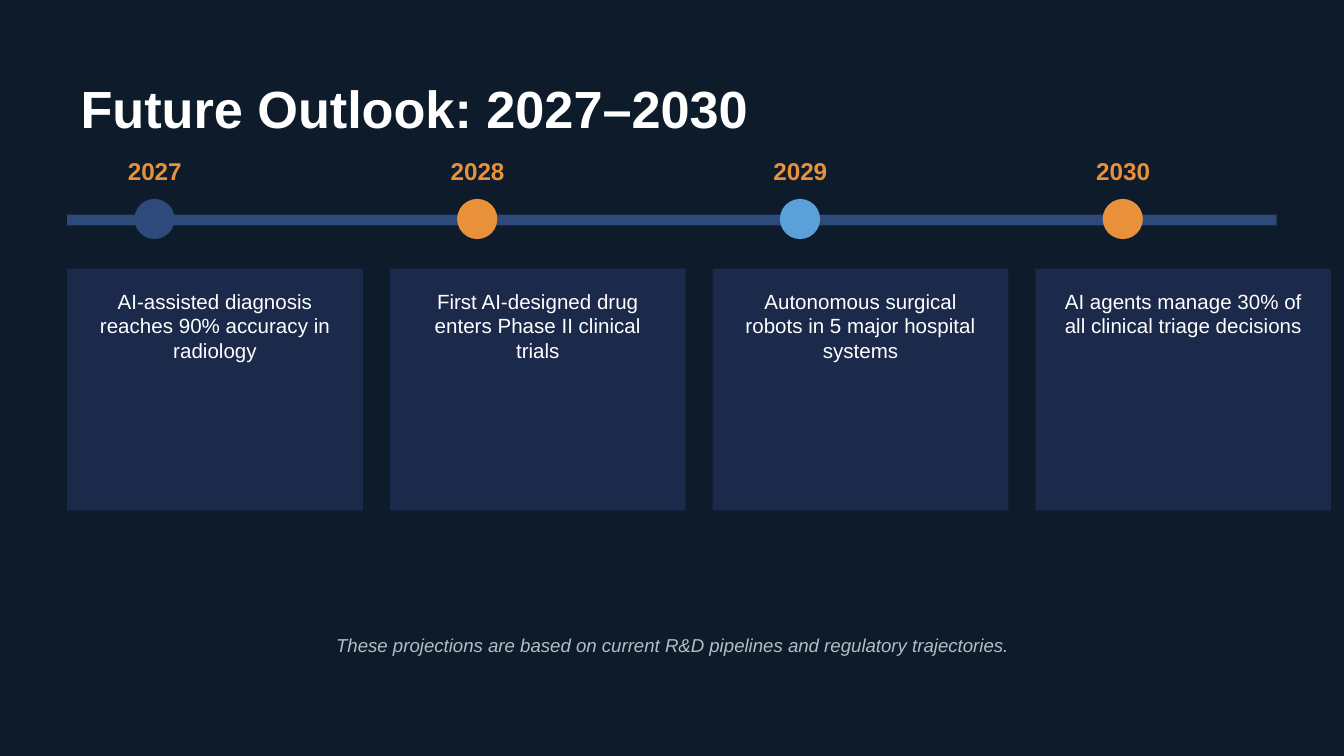
from dataclasses import dataclass

from pptx import Presentation
from pptx import util as u
from pptx.dml.color import RGBColor
from pptx.enum import shapes as sh, text as tx


@dataclass(frozen=True)
class Theme:
    """Hold the colours, font and type sizes."""
    font: str = "Arial"
    back: str = "0D1B2A"
    card: str = "1B2A4A"
    navy: str = "2E4A7A"
    sky: str = "5BA0D9"
    amber: str = "E8913A"
    white: str = "FFFFFF"
    grey: str = "B0BEC5"
    head: int = 28
    year: int = 13
    body: int = 11
    note: int = 10


T = Theme()
RECT = sh.MSO_SHAPE.RECTANGLE
OVAL = sh.MSO_SHAPE.OVAL
LEFT, MID = tx.PP_ALIGN.LEFT, tx.PP_ALIGN.CENTER
TOP, CENTRE = tx.MSO_ANCHOR.TOP, tx.MSO_ANCHOR.MIDDLE
STEPS = [
    ("2027", T.navy, "AI-assisted diagnosis reaches 90% accuracy in radiology"),
    ("2028", T.amber, "First AI-designed drug enters Phase II clinical trials"),
    ("2029", T.sky, "Autonomous surgical robots in 5 major hospital systems"),
    ("2030", T.amber, "AI agents manage 30% of all clinical triage decisions"),
]


def write(item, words, size, color=T.white, bold=False, italic=False,
          align=MID, anchor=CENTRE):
    """Put formatted text into a shape."""
    frame = item.text_frame
    frame.word_wrap = True
    frame.auto_size = tx.MSO_AUTO_SIZE.NONE
    frame.vertical_anchor = anchor
    para = frame.paragraphs[0]
    para.alignment = align
    run = para.add_run()
    run.text = words
    font = run.font
    font.name, font.size = T.font, u.Pt(size)
    font.bold, font.italic = bold, italic
    font.color.rgb = RGBColor.from_string(color)


def label(slide, box, words, size, **style):
    """Add a text box at a box in centimetres."""
    item = slide.shapes.add_textbox(*map(u.Cm, box))
    write(item, words, size, **style)


def block(slide, kind, box, color):
    """Add a plain filled shape."""
    item = slide.shapes.add_shape(kind, *map(u.Cm, box))
    item.shadow.inherit = False
    item.fill.solid()
    item.fill.fore_color.rgb = RGBColor.from_string(color)
    item.line.fill.background()


def header(slide, box):
    """Move and fill the title placeholder."""
    item = slide.shapes.title
    item.left, item.top, item.width, item.height = map(u.Cm, box)
    write(item, "Future Outlook: 2027–2030", T.head, bold=True, align=LEFT)


def step(slide, box, year, color, words):
    """Place one year with its dot and card."""
    x, y, w, h = box
    pad, drop = 0.25, 2.29
    block(slide, OVAL, (x + 1.27, y + 0.97, 0.76, 0.76), color)
    label(slide, (x + 0.51, y, 2.29, 0.89), year, T.year,
          color=T.amber, bold=True)
    block(slide, RECT, (x, y + drop, w, h - drop), T.card)
    label(slide, (x + pad, y + drop + pad, w - 2 * pad, h - drop - 2 * pad),
          words, T.body, anchor=TOP)


def timeline(slide, box):
    """Place the bar and the evenly spaced steps."""
    x, y, w, h = box
    wide, gap = 5.59, 0.51
    block(slide, RECT, (x, y + 1.27, w, 0.2), T.navy)
    for i, data in enumerate(STEPS):
        step(slide, (x + i * (wide + gap), y, wide, h), *data)


def footer(slide, box):
    """Place the closing note."""
    label(slide, box, "These projections are based on current R&D pipelines "
          "and regulatory trajectories.", T.note, color=T.grey, italic=True)


def main():
    """Build and save the slide."""
    deck = Presentation()
    deck.slide_width, deck.slide_height = u.Cm(25.4), u.Cm(14.29)
    slide = deck.slides.add_slide(deck.slide_layouts.get_by_name("Title Only"))
    fill = slide.background.fill
    fill.solid()
    fill.fore_color.rgb = RGBColor.from_string(T.back)
    left, wide = 1.27, 22.86
    header(slide, (left, 1.27, wide, 1.52))
    timeline(slide, (left, 2.79, wide, 6.86))
    footer(slide, (left, 11.68, wide, 1.02))
    deck.save("out.pptx")


if __name__ == "__main__":
    main()
